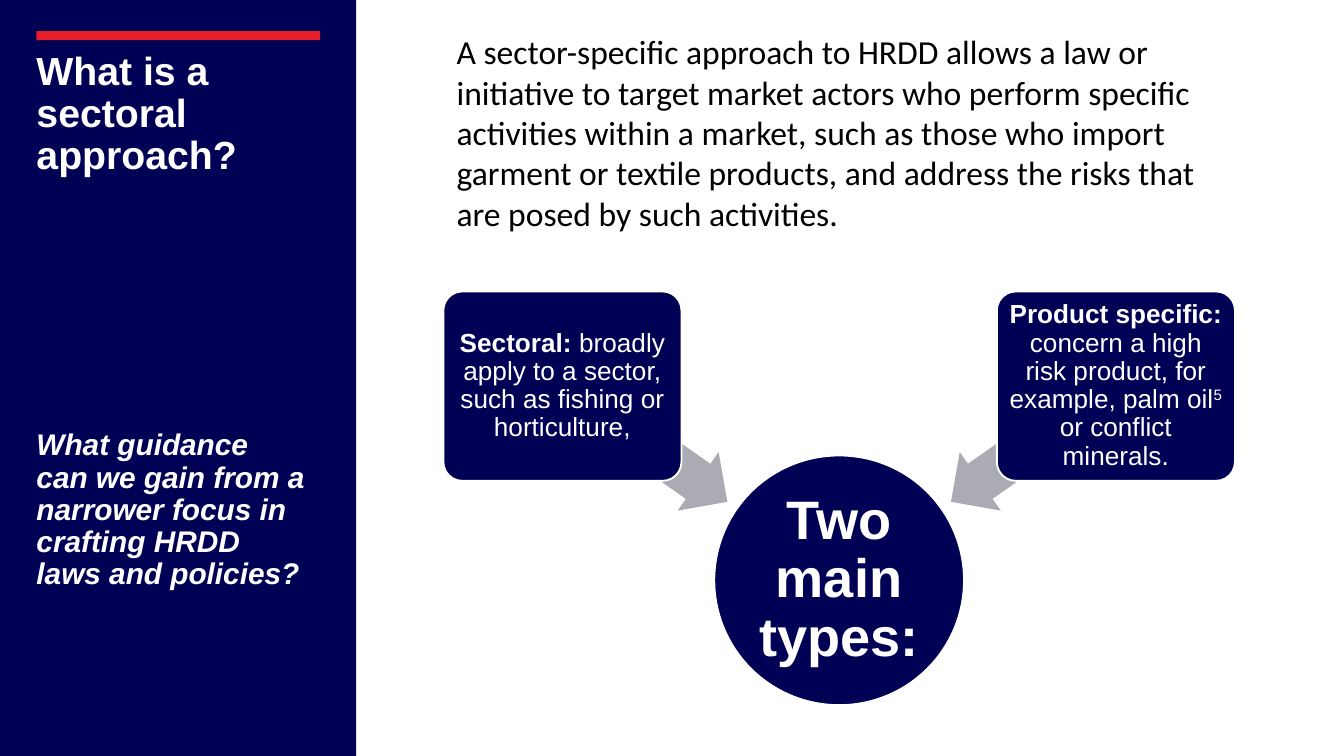
from dataclasses import dataclass

from pptx import Presentation
from pptx import util as u
from pptx.dml import color
from pptx.enum import shapes, text


@dataclass(frozen=True)
class Theme:
    """Hold the colours, fonts and type sizes of the slide."""
    navy: str = "000054"
    red: str = "E61E2A"
    grey: str = "ABABB4"
    white: str = "FFFFFF"
    black: str = "000000"
    heading: str = "Arial"
    body: str = "Calibri"
    title_size: int = 21
    question_size: int = 16
    intro_size: int = 18
    hub_size: int = 29
    card_size: int = 14


THEME = Theme()
KIND = shapes.MSO_SHAPE
AXIS = 15.86


def apply_format(target, values):
    """Set each attribute of the target from a dict of values."""
    for attribute, value in values.items():
        setattr(target, attribute, value)


def add_block(slide, kind, area, fill, outline=None):
    """Add a filled preset shape with an optional outline."""
    block = slide.shapes.add_shape(kind, *map(u.Cm, area))
    block.shadow.inherit = False
    block.fill.solid()
    block.fill.fore_color.rgb = color.RGBColor.from_string(fill)
    if outline:
        block.line.color.rgb = color.RGBColor.from_string(outline)
        block.line.width = u.Pt(1)
    else:
        block.line.fill.background()
    return block


def write(frame, runs, font, ink=THEME.white, spacing=0.9, align=text.PP_ALIGN.LEFT,
          anchor=text.MSO_ANCHOR.TOP, insets=(0, 0.13, 0.25, 0.13)):
    """Fill a text frame with one paragraph of (words, font changes) runs."""
    left, top, right, bottom = map(u.Cm, insets)
    apply_format(frame, {"word_wrap": True, "vertical_anchor": anchor,
                         "margin_left": left, "margin_top": top,
                         "margin_right": right, "margin_bottom": bottom})
    paragraph = frame.paragraphs[0]
    apply_format(paragraph, {"alignment": align, "line_spacing": spacing})
    for words, changes in runs:
        run = paragraph.add_run()
        run.text = words
        values = {**font, **changes}
        baseline = values.pop("baseline", None)
        apply_format(run.font, values)
        run.font.color.rgb = color.RGBColor.from_string(ink)
        if baseline:
            run.font._element.set("baseline", baseline)


def add_sidebar_text(slide, area, words, size, italic=False):
    """Add bold white text on the navy sidebar."""
    sidebar_text = slide.shapes.add_textbox(*map(u.Cm, area))
    font = {"name": THEME.heading, "size": u.Pt(size), "bold": True, "italic": italic}
    write(sidebar_text.text_frame, [(words, {})], font)


def add_intro(slide, words):
    """Add the introductory paragraph on its white panel."""
    intro = add_block(slide, KIND.RECTANGLE, (8.38, 0.46, 14.78, 4.11), THEME.white)
    write(intro.text_frame, [(words, {})],
          {"name": THEME.body, "size": u.Pt(THEME.intro_size)},
          ink=THEME.black, spacing=1.0, insets=(0.25, 0.13, 0.25, 0.13))


def add_node(slide, kind, area, runs, size, inset):
    """Add an outlined navy diagram node with centred text."""
    node = add_block(slide, kind, area, THEME.navy, THEME.white)
    if kind == KIND.ROUNDED_RECTANGLE:
        node.adjustments[0] = 0.1
    write(node.text_frame, runs, {"name": THEME.heading, "size": u.Pt(size)},
          align=text.PP_ALIGN.CENTER, anchor=text.MSO_ANCHOR.MIDDLE, insets=(inset,) * 4)


def add_branch(slide, side, runs):
    """Add a card and its arrow to the hub; side is -1 for left, 1 for right."""
    arrow_centre, card_centre = AXIS + side * 3.67, AXIS + side * 5.23
    arrow = add_block(slide, KIND.LEFT_ARROW,
                      (arrow_centre - 1.9, 7.72, 3.8, 1.35), THEME.grey)
    arrow.adjustments[0] = 0.6
    arrow.rotation = 270 + side * 55
    add_node(slide, KIND.ROUNDED_RECTANGLE, (card_centre - 2.25, 5.51, 4.5, 3.58),
             runs, THEME.card_size, 0.08)


def main():
    """Build the sectoral approach slide and save it."""
    deck = Presentation()
    apply_format(deck, {"slide_width": u.Cm(25.4), "slide_height": u.Cm(14.29)})
    slide = deck.slides.add_slide(deck.slide_layouts[6])

    add_block(slide, KIND.RECTANGLE, (0, 0, 6.73, 14.29), THEME.navy)
    add_block(slide, KIND.RECTANGLE, (0.69, 0.59, 5.36, 0.17), THEME.red)
    add_sidebar_text(slide, (0.69, 0.84, 5.36, 2.77), "What is a sectoral approach?",
                     THEME.title_size)
    add_sidebar_text(slide, (0.69, 8, 5.36, 3.4),
                     "What guidance can we gain from a narrower focus in crafting "
                     "HRDD laws and policies?", THEME.question_size, italic=True)

    bold = {"bold": True}
    add_node(slide, KIND.OVAL, (AXIS - 2.36, 8.61, 4.72, 4.72),
             [("Two main types:", bold)], THEME.hub_size, 0.05)
    add_branch(slide, -1, [
        ("Sectoral: ", bold),
        ("broadly apply to a sector, such as fishing or horticulture,", {})])
    add_branch(slide, 1, [
        ("Product specific: ", bold),
        ("concern a high risk product, for example, palm oil", {}),
        ("5", {"baseline": "30000"}),
        (" or conflict minerals.", {})])
    add_intro(slide, "A sector-specific approach to HRDD allows a law or initiative to "
              "target market actors who perform specific activities within a market, "
              "such as those who import garment or textile products, and address the "
              "risks that are posed by such activities.")
    deck.save("out.pptx")


if __name__ == "__main__":
    main()
